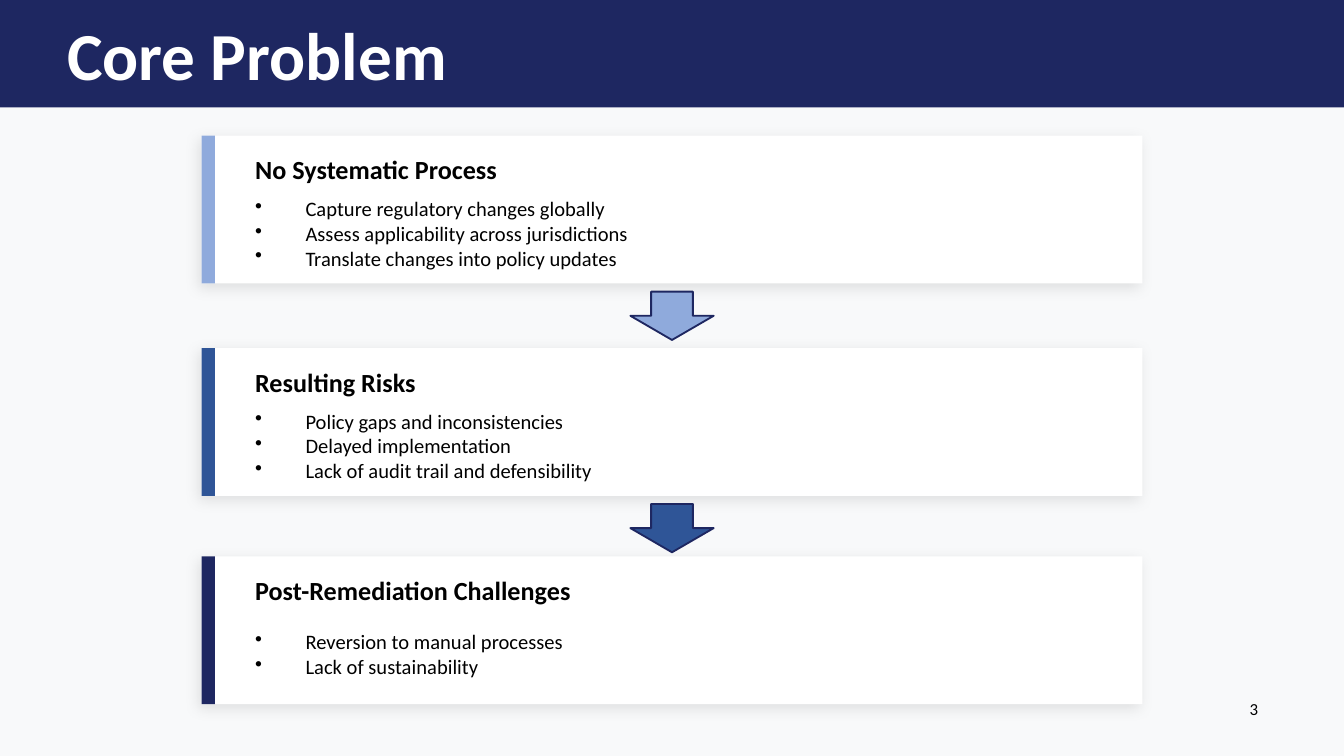
import pptx
import pptx.dml.color
import pptx.enum.shapes
import pptx.enum.text
import pptx.oxml
import pptx.oxml.ns
import pptx.util

RGB = pptx.dml.color.RGBColor
SHAPE = pptx.enum.shapes.MSO_SHAPE
ANCHOR = pptx.enum.text.MSO_ANCHOR

NAVY = RGB(0x1E, 0x27, 0x61)
BLUE = RGB(0x2F, 0x55, 0x97)
SKY = RGB(0x8F, 0xAA, 0xDC)
WHITE = RGB(0xFF, 0xFF, 0xFF)
BLACK = RGB(0, 0, 0)
PALE = RGB(0xF8, 0xF9, 0xFA)

FONT = "Calibri"
SCALE = 4572  # EMU per px, 200 px to the inch
WIDE, HIGH = 2000, 1125
INDENT = 75

CARD_X, CARD_W, CARD_H = 300, 1400, 220
ARROW_W, ARROW_H = 124, 72

# Top, accent colour, heading, points
CARDS = [
    (202, SKY, "No Systematic Process", [
        "Capture regulatory changes globally",
        "Assess applicability across jurisdictions",
        "Translate changes into policy updates",
    ]),
    (518, BLUE, "Resulting Risks", [
        "Policy gaps and inconsistencies",
        "Delayed implementation",
        "Lack of audit trail and defensibility",
    ]),
    (828, NAVY, "Post-Remediation Challenges", [
        "Reversion to manual processes",
        "Lack of sustainability",
    ]),
]
ARROWS = [(434, SKY), (750, BLUE)]


def px(*nums):
    return [pptx.util.Emu(num * SCALE) for num in nums]


def add_block(shapes, box, fill, kind=SHAPE.RECTANGLE, line=None):
    block = shapes.add_shape(kind, *px(*box))
    block.shadow.inherit = False
    block.fill.solid()
    block.fill.fore_color.rgb = fill
    if line is None:
        block.line.fill.background()
    else:
        block.line.color.rgb = line
        block.line.width = pptx.util.Pt(1)
    return block


def add_shade(block):
    """Soft shadow: black at 10 %, 8 pt blur, 3 pt away at 135 degrees."""
    effects = block._element.spPr.find(pptx.oxml.ns.qn("a:effectLst"))
    effects.append(pptx.oxml.parse_xml(
        f'<a:outerShdw {pptx.oxml.ns.nsdecls("a")} blurRad="101600" '
        'dist="38100" dir="8100000" algn="bl" rotWithShape="0">'
        '<a:srgbClr val="000000"><a:alpha val="10000"/></a:srgbClr>'
        '</a:outerShdw>'))


def add_bullet(para):
    props = para._p.get_or_add_pPr()
    indent = INDENT * SCALE
    props.set("marL", str(indent))
    props.set("indent", str(-indent))
    props.append(pptx.oxml.parse_xml(
        f'<a:buChar {pptx.oxml.ns.nsdecls("a")} char="•"/>'))


def add_text(shapes, box, lines, size, color=BLACK, bold=False,
             anchor=ANCHOR.MIDDLE, bullet=False, inset=True):
    frame = shapes.add_textbox(*px(*box)).text_frame
    frame.word_wrap = True
    frame.vertical_anchor = anchor
    if not inset:
        frame.margin_left = frame.margin_right = 0
        frame.margin_top = frame.margin_bottom = 0
    for num, line in enumerate(lines):
        para = frame.add_paragraph() if num else frame.paragraphs[0]
        if bullet:
            add_bullet(para)
        run = para.add_run()
        run.text = line
        run.font.name = FONT
        run.font.size = pptx.util.Pt(size)
        run.font.bold = bold
        run.font.color.rgb = color


def add_header(shapes, box, title):
    x, y, w, h = box
    add_block(shapes, box, NAVY)
    add_text(shapes, (x + 100, y + 40, w - 200, h - 80), [title], 36,
             color=WHITE, bold=True, inset=False)


def add_card(shapes, box, accent, head, points):
    x, y, w, h = box
    group = shapes.add_group_shape().shapes
    add_shade(add_block(group, box, WHITE))
    add_block(group, (x, y, 20, h), accent)
    add_text(group, (x + 60, y + 20, w - 100, 60), [head], 14, bold=True)
    add_text(group, (x + 60, y + 90, w - 100, h - 110), points, 11,
             bullet=True)


def main():
    deck = pptx.Presentation()
    deck.slide_width, deck.slide_height = px(WIDE, HIGH)
    slide = deck.slides.add_slide(deck.slide_layouts[6])
    slide.background.fill.solid()
    slide.background.fill.fore_color.rgb = PALE
    shapes = slide.shapes

    # Header band
    add_header(shapes, (0, 0, WIDE, 160), "Core Problem")

    # Cards
    for top, accent, head, points in CARDS:
        add_card(shapes, (CARD_X, top, CARD_W, CARD_H), accent, head, points)

    # Arrows between cards
    left = CARD_X + (CARD_W - ARROW_W) // 2
    for top, fill in ARROWS:
        add_block(shapes, (left, top, ARROW_W, ARROW_H), fill,
                  kind=SHAPE.DOWN_ARROW, line=NAVY)

    # Page number
    add_text(shapes, (1840, 1030, 94, 70), ["3"], 9, anchor=ANCHOR.TOP)

    deck.save("out.pptx")


if __name__ == "__main__":
    main()
